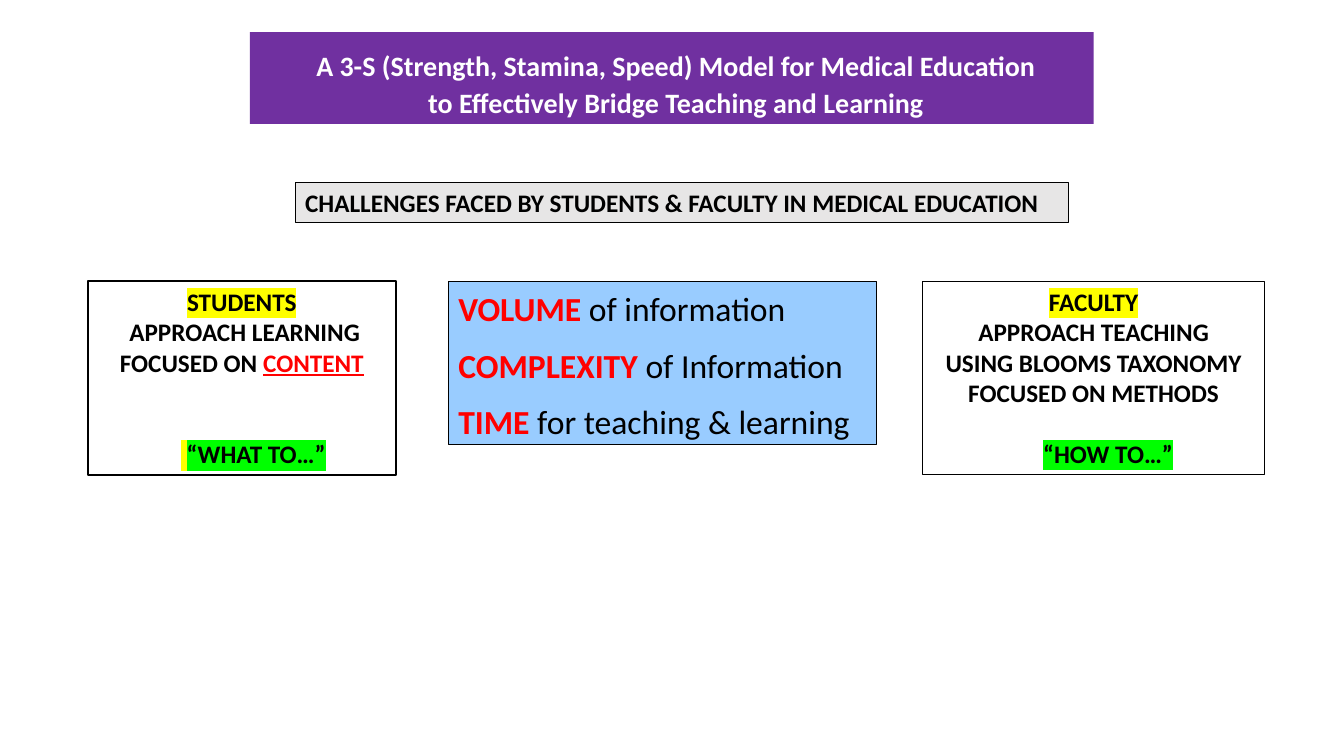
from lxml import etree
from pptx import Presentation
from pptx.dml.color import RGBColor
from pptx.enum.text import MSO_ANCHOR, MSO_AUTO_SIZE, PP_ALIGN
from pptx.oxml.ns import qn
from pptx.util import Cm, Pt

TOP, LOW = MSO_ANCHOR.TOP, MSO_ANCHOR.BOTTOM
FIXED = MSO_AUTO_SIZE.NONE
LEFT, MID = PP_ALIGN.LEFT, PP_ALIGN.CENTER

HUES = {
    "black": "000000", "white": "FFFFFF", "red": "FF0000",
    "purple": "7030A0", "blue": "99CCFF", "gray": "E7E6E6",
    "yellow": "FFFF00", "green": "00FF00",
}
FRAME = {
    "word_wrap": True, "auto_size": FIXED, "vertical_anchor": TOP,
    "margin_left": Cm(0.25), "margin_right": Cm(0.25),
    "margin_top": Cm(0.13), "margin_bottom": Cm(0.13),
}
PARA = {"alignment": MID, "line_spacing": 1.0, "space_before": Pt(0), "space_after": Pt(0)}
FONT = {"name": "Calibri", "size": Pt(18), "bold": True}


def apply(item, *styles):
    for style in styles:
        for key, value in style.items():
            setattr(item, key, value)


class Deck:
    def __init__(self):
        self.show = Presentation()
        self.show.slide_width, self.show.slide_height = Cm(33.87), Cm(19.05)
        self.slide = self.show.slides.add_slide(self.show.slide_layouts[5])

    def place(self, shape, spot, fill=None, line=None):
        apply(shape, dict(zip(("left", "top", "width", "height"), map(Cm, spot))))
        if fill:
            shape.fill.solid()
            shape.fill.fore_color.rgb = RGBColor.from_string(HUES[fill])
        if line:
            shape.line.color.rgb = RGBColor.from_string(HUES["black"])
            shape.line.width = Pt(line)

    def span(self, para, text, hue="black", mark=None, **font):
        run = para.add_run()
        run.text = text
        run.font.color.rgb = RGBColor.from_string(HUES[hue])
        if mark:
            light = etree.SubElement(run.font._element, qn("a:highlight"))
            etree.SubElement(light, qn("a:srgbClr")).set("val", HUES[mark])
        apply(run.font, FONT, font)

    def label(self, shape, rows, frame=None, style=None):
        body = shape.text_frame
        apply(body, FRAME, frame or {})
        for i, (runs, extra, indent) in enumerate(rows):
            para = body.add_paragraph() if i else body.paragraphs[0]
            apply(para, PARA, style or {}, extra)
            if indent:
                para._p.get_or_add_pPr().set("marL", str(Cm(indent)))
            for text, font in runs:
                self.span(para, text, **font)

    def title(self, spot, rows, fill, frame):
        shape = self.slide.shapes.title
        self.place(shape, spot, fill)
        self.label(shape, rows, frame)

    def box(self, spot, rows, fill=None, line=0.75, frame=None, style=None):
        shape = self.slide.shapes.add_textbox(0, 0, 0, 0)
        self.place(shape, spot, fill, line)
        self.label(shape, rows, frame, style)


def row(*runs, indent=0, **extra):
    return runs, extra, indent


def main():
    deck = Deck()
    head = {"hue": "white", "size": Pt(20)}
    deck.title(
        (6.3, 0.81, 21.26, 2.31),
        [row(("A 3-S (Strength, Stamina, Speed) Model for Medical Education", head),
             space_after=Pt(2)),
         row(("to Effectively Bridge Teaching and Learning", head))],
        "purple", {"vertical_anchor": LOW, "margin_left": Cm(0.46)})

    deck.box(
        (7.44, 4.6, 19.48, 1.02),
        [row(("CHALLENGES FACED BY STUDENTS & FACULTY IN MEDICAL EDUCATION", {}))],
        "gray", style={"alignment": LEFT})

    level = 7.09
    large = {"size": Pt(24)}
    issues = [("VOLUME", " of information"), ("COMPLEXITY", " of Information"),
              ("TIME", " for teaching & learning")]
    deck.box(
        (11.3, level, 10.8, 4.11),
        [row((key, {"hue": "red", **large}), (rest, {"bold": False, **large}),
             space_before=Pt(20 if i else 0))
         for i, (key, rest) in enumerate(issues)],
        "blue", frame={"margin_top": Cm(0.45)},
        style={"alignment": LEFT, "line_spacing": 0.7})

    deck.box(
        (2.21, level, 7.77, 4.88),
        [row(("STUDENTS", {"mark": "yellow"})),
         row((" APPROACH LEARNING FOCUSED ON ", {}),
             ("CONTENT", {"hue": "red", "underline": True})),
         row((" ", {"mark": "yellow"}), ("“WHAT TO…”", {"mark": "green"}),
             indent=0.58, space_before=Pt(44))],
        line=1.5)

    deck.box(
        (23.24, level, 8.64, 4.88),
        [row(("FACULTY", {"mark": "yellow"})),
         row(("APPROACH TEACHING", {})),
         row(("USING BLOOMS TAXONOMY FOCUSED ON METHODS", {})),
         row(("“HOW TO…”", {"mark": "green"}), indent=0.73, space_before=Pt(22))])

    deck.show.save("out.pptx")


if __name__ == "__main__":
    main()
